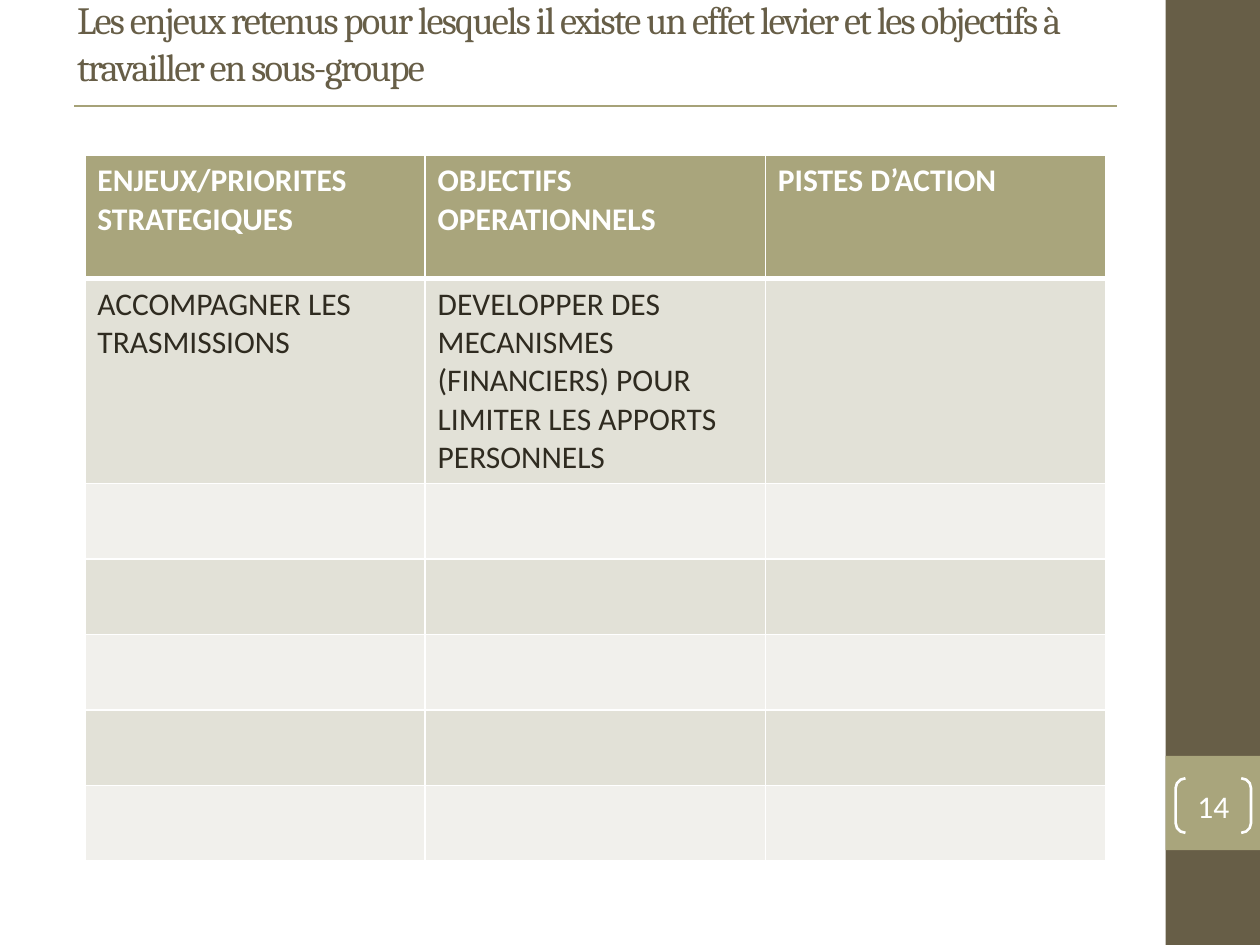
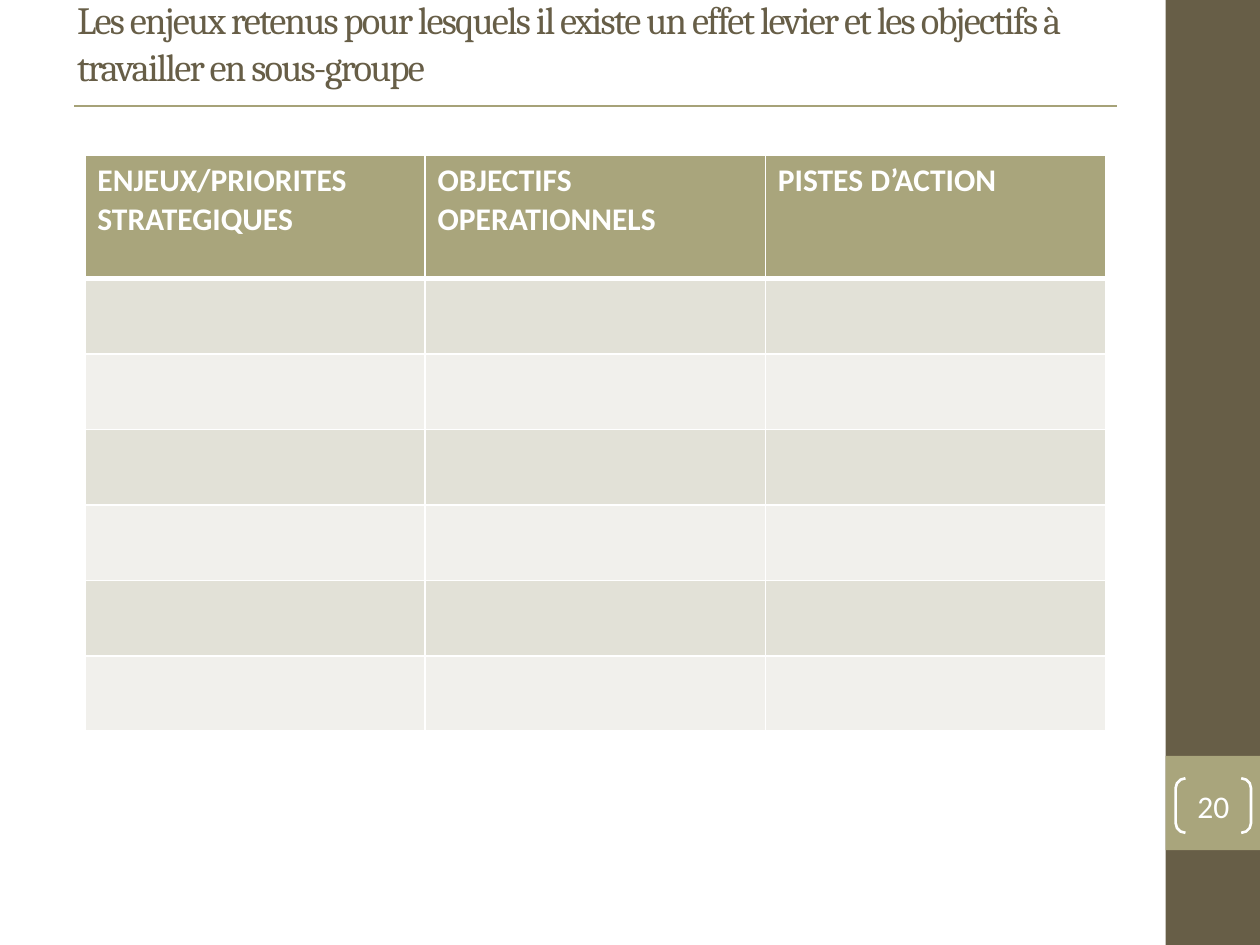
from lxml import etree
from pptx import Presentation
from pptx.dml.color import RGBColor
from pptx.enum import shapes, text
from pptx.oxml.ns import qn
from pptx.util import Cm, Pt

INK = {"dark": "675E47", "olive": "A9A57C", "rule": "A6A278", "white": "FFFFFF",
       "body": "2F2B20", "odd": "E2E1D7", "even": "F1F0EC"}
TITLE = ("Les enjeux retenus pour lesquels il existe un effet levier "
         "et les objectifs à travailler en sous-groupe")
HEADS = ["ENJEUX/PRIORITES STRATEGIQUES", "OBJECTIFS OPERATIONNELS", "PISTES D’ACTION"]
GOALS = ["ACCOMPAGNER LES TRASMISSIONS",
         "DEVELOPPER DES MECANISMES (FINANCIERS) POUR LIMITER LES APPORTS PERSONNELS", ""]
ROWS = 7
HEAD, ROW, TALL = 2.49, 1.52, 4.12


def tint(name):
    """Return the named colour."""
    return RGBColor.from_string(INK[name])


def style(frame, face, size, color, bold=False):
    """Format every run of a text frame."""
    for para in frame.paragraphs:
        for run in para.runs:
            font = run.font
            font.name, font.size, font.bold = face, Pt(size), bold
            font.color.rgb = tint(color)


def block(slide, box, color):
    """Add a plain filled rectangle."""
    rect = slide.shapes.add_shape(shapes.MSO_SHAPE.RECTANGLE, *map(Cm, box))
    rect.shadow.inherit = False
    rect.fill.solid()
    rect.fill.fore_color.rgb = tint(color)
    rect.line.fill.background()


def band(slide, box, number):
    """Draw the side band with its bracketed page number."""
    left, top, width, height = box
    mark = top + 0.8 * height
    block(slide, box, "dark")
    block(slide, (left, mark, width, width), "olive")
    page = slide.shapes.add_shape(shapes.MSO_SHAPE.DOUBLE_BRACKET, Cm(left + 0.2),
                                  Cm(mark + 0.45), Cm(1.52), Cm(1.1))
    page.adjustments[0] = 0.18
    page.shadow.inherit = False
    page.fill.background()
    page.line.color.rgb = tint("white")
    page.line.width = Pt(1.5)
    frame = page.text_frame
    frame.margin_left = frame.margin_right = frame.margin_top = frame.margin_bottom = 0
    frame.vertical_anchor = text.MSO_ANCHOR.MIDDLE
    frame.text = str(number)
    frame.paragraphs[0].alignment = text.PP_ALIGN.CENTER
    style(frame, "Calibri", 18, "white")


def header(slide, box):
    """Fill the title and underline it."""
    left, top, width, height = box
    title = slide.shapes.title
    title.left, title.top, title.width, title.height = map(Cm, box)
    frame = title.text_frame
    frame.text = TITLE
    frame.word_wrap = True
    frame.auto_size = text.MSO_AUTO_SIZE.NONE
    frame.vertical_anchor = text.MSO_ANCHOR.MIDDLE
    para = frame.paragraphs[0]
    para.alignment = text.PP_ALIGN.LEFT
    style(frame, "Cambria", 22, "dark")
    para.runs[0].font._element.set("spc", "-100")
    level = Cm(top + height + 0.61)
    rule = slide.shapes.add_connector(shapes.MSO_CONNECTOR.STRAIGHT, Cm(left + 0.2), level,
                                      Cm(left + width + 0.05), level)
    rule.line.color.rgb = tint("rule")
    rule.line.width = Pt(1)
    etree.SubElement(rule._element.spPr, qn("a:effectLst"))


def edge(cell, side, points):
    """Give one side of a cell a white border."""
    line = etree.SubElement(cell._tc.get_or_add_tcPr(), qn("a:ln" + side), w=str(Pt(points)))
    fill = etree.SubElement(line, qn("a:solidFill"))
    etree.SubElement(fill, qn("a:srgbClr"), val=INK["white"])


def grid(slide, box, goals):
    """Build the table of issues, objectives and actions."""
    left, top, width = box
    first = TALL if goals else ROW
    highs = [HEAD, first] + [ROW] * (ROWS - 2)
    table = slide.shapes.add_table(ROWS, len(HEADS), Cm(left), Cm(top), Cm(width),
                                   Cm(sum(highs))).table
    words = {0: HEADS, 1: goals}
    for r, high in enumerate(highs):
        table.rows[r].height = Cm(high)
        shade = "olive" if r == 0 else "odd" if r % 2 else "even"
        for c in range(len(HEADS)):
            cell = table.cell(r, c)
            for side in "LRTB":
                edge(cell, side, 3 if (r, side) in ((0, "B"), (1, "T")) else 1)
            cell.fill.solid()
            cell.fill.fore_color.rgb = tint(shade)
            if words.get(r):
                cell.text_frame.text = words[r][c]
                style(cell.text_frame, "Calibri", 18, "body" if r else "white", r == 0)


def page(deck, number, goals):
    """Add one complete worksheet slide."""
    slide = deck.slides.add_slide(deck.slide_layouts[5])
    band(slide, (23.5, 0, 1.9, 19.05), number)
    header(slide, (1.3, 0.2, 21.16, 1.32))
    grid(slide, (1.71, 3.13, 20.58), goals)


def main():
    """Build and save the deck."""
    deck = Presentation()
    deck.slide_width, deck.slide_height = Cm(25.4), Cm(19.05)
    page(deck, 14, GOALS)
    page(deck, 20, [])
    deck.save("out.pptx")


if __name__ == "__main__":
    main()
